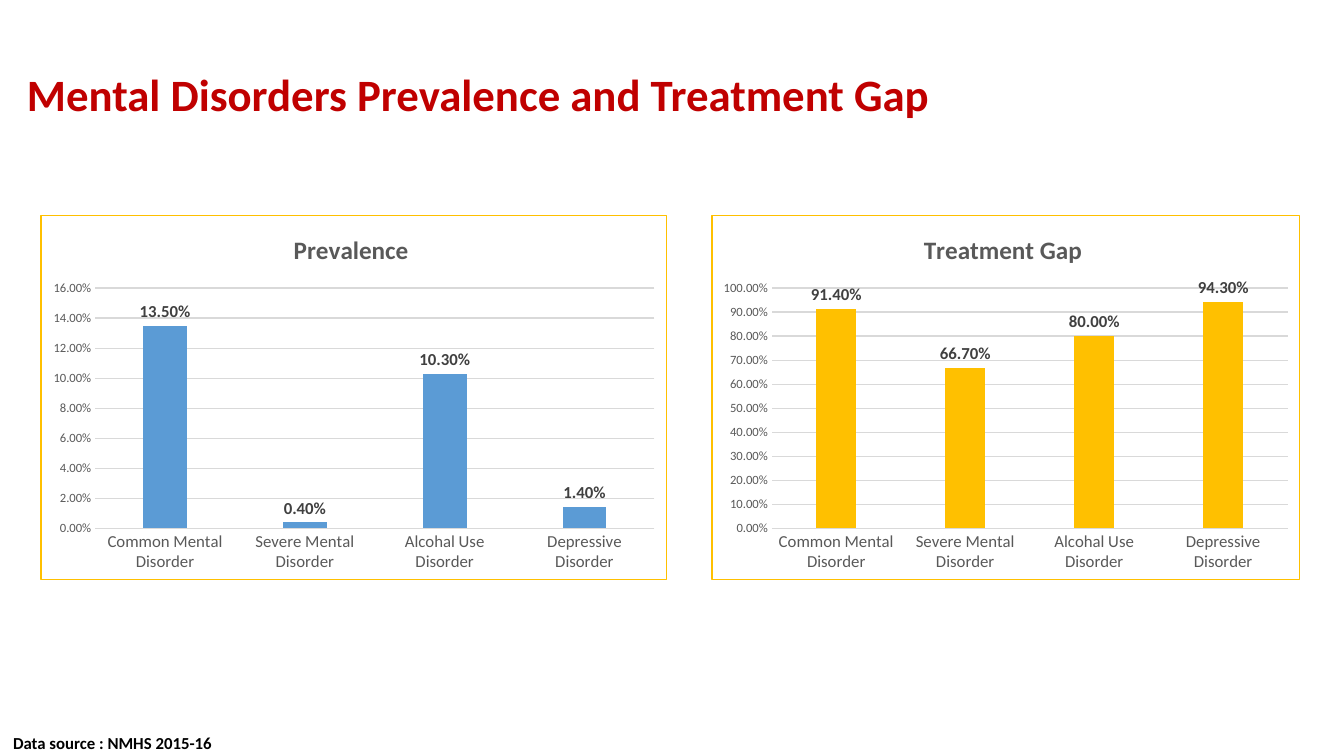
import pptx
import pptx.chart.data
import pptx.dml.color
import pptx.enum.chart
import pptx.enum.text
import pptx.oxml
import pptx.oxml.ns
import pptx.util

Cm = pptx.util.Cm
Pt = pptx.util.Pt
RGBColor = pptx.dml.color.RGBColor

FONT = "Calibri"
RED = RGBColor(0xC0, 0x00, 0x00)
BLACK = RGBColor(0x00, 0x00, 0x00)
BLUE = RGBColor(0x5B, 0x9B, 0xD5)
AMBER = RGBColor(0xFF, 0xC0, 0x00)
LABEL_GREY = RGBColor(0x40, 0x40, 0x40)
AXIS_GREY = RGBColor(0x59, 0x59, 0x59)
GRID_GREY = RGBColor(0xD9, 0xD9, 0xD9)

PERCENT = "0.00%"
DISORDERS = ["Common Mental Disorder", "Severe Mental Disorder",
             "Alcohal Use Disorder", "Depressive Disorder"]
PREVALENCE = [0.135, 0.004, 0.103, 0.014]
TREATMENT_GAP = [0.914, 0.667, 0.8, 0.943]


def style_font(font, size, color, bold=False):
    font.name = FONT
    font.size = Pt(size)
    font.bold = bold
    font.color.rgb = color


def style_line(line, color):
    line.color.rgb = color
    line.width = Pt(0.75)


def add_heading(slide, box, text, size, color, anchor):
    """One bold line of text in the given box."""
    frame = slide.shapes.add_textbox(*box).text_frame
    frame.word_wrap = True
    frame.vertical_anchor = anchor
    frame.text = text
    paragraph = frame.paragraphs[0]
    paragraph.line_spacing = 0.9 if size > 20 else 1.0
    style_font(paragraph.runs[0].font, size, color, bold=True)


def add_border(chart, color):
    """White chart area with a thin outline."""
    border = pptx.oxml.parse_xml(
        f'<c:spPr {pptx.oxml.ns.nsdecls("c", "a")}>'
        '<a:solidFill><a:srgbClr val="FFFFFF"/></a:solidFill>'
        f'<a:ln w="{Pt(0.75)}"><a:solidFill><a:srgbClr val="{color}"/>'
        '</a:solidFill></a:ln></c:spPr>')
    chart.element.find(pptx.oxml.ns.qn("c:chart")).addnext(border)


def add_rate_chart(slide, box, title, rates, color):
    """Column chart of one percentage per disorder."""
    data = pptx.chart.data.CategoryChartData(number_format=PERCENT)
    data.categories = DISORDERS
    data.add_series("Series 1", rates)
    chart = slide.shapes.add_chart(
        pptx.enum.chart.XL_CHART_TYPE.COLUMN_CLUSTERED, *box, data).chart
    style_font(chart.font, 10, BLACK)
    chart.has_legend = False
    add_border(chart, AMBER)

    # Chart title
    chart.has_title = True
    chart.chart_title.include_in_layout = False
    title_frame = chart.chart_title.text_frame
    title_frame.text = title
    style_font(title_frame.paragraphs[0].runs[0].font, 18, AXIS_GREY, bold=True)

    # Axes
    no_tick = pptx.enum.chart.XL_TICK_MARK.NONE
    for axis, size in ((chart.category_axis, 12), (chart.value_axis, 9)):
        axis.major_tick_mark = no_tick
        axis.minor_tick_mark = no_tick
        style_font(axis.tick_labels.font, size, AXIS_GREY)
    style_line(chart.category_axis.format.line, GRID_GREY)
    rate_axis = chart.value_axis
    rate_axis.format.line.fill.background()
    rate_axis.has_major_gridlines = True
    style_line(rate_axis.major_gridlines.format.line, GRID_GREY)
    rate_axis.tick_labels.number_format = PERCENT
    rate_axis.tick_labels.number_format_is_linked = False

    # Columns and their labels
    plot = chart.plots[0]
    plot.vary_by_categories = False
    plot.gap_width = 219
    plot.overlap = -27
    columns = plot.series[0]
    columns.format.fill.solid()
    columns.format.fill.fore_color.rgb = color
    labels = columns.data_labels
    labels.show_value = True
    labels.number_format = PERCENT
    labels.number_format_is_linked = False
    labels.position = pptx.enum.chart.XL_LABEL_POSITION.OUTSIDE_END
    style_font(labels.font, 12, LABEL_GREY, bold=True)


def main():
    deck = pptx.Presentation()
    deck.slide_width = Cm(33.87)
    deck.slide_height = Cm(19.05)
    slide = deck.slides.add_slide(deck.slide_layouts[6])
    anchors = pptx.enum.text.MSO_ANCHOR

    # Title
    add_heading(slide, (Cm(0.43), Cm(1.3), Cm(31.17), Cm(2.29)),
                "Mental Disorders Prevalence and Treatment Gap",
                32, RED, anchors.MIDDLE)

    # Charts side by side
    top, height = Cm(5.41), Cm(9.2)
    add_rate_chart(slide, (Cm(17.93), top, Cm(14.83), height),
                   "Treatment Gap ", TREATMENT_GAP, AMBER)
    add_rate_chart(slide, (Cm(1.02), top, Cm(15.8), height),
                   "Prevalence ", PREVALENCE, BLUE)

    # Source line
    add_heading(slide, (Cm(0.08), Cm(18.34), Cm(12.7), Cm(0.76)),
                "Data source : NMHS 2015-16", 12, BLACK, anchors.TOP)

    deck.save("out.pptx")


if __name__ == "__main__":
    main()
